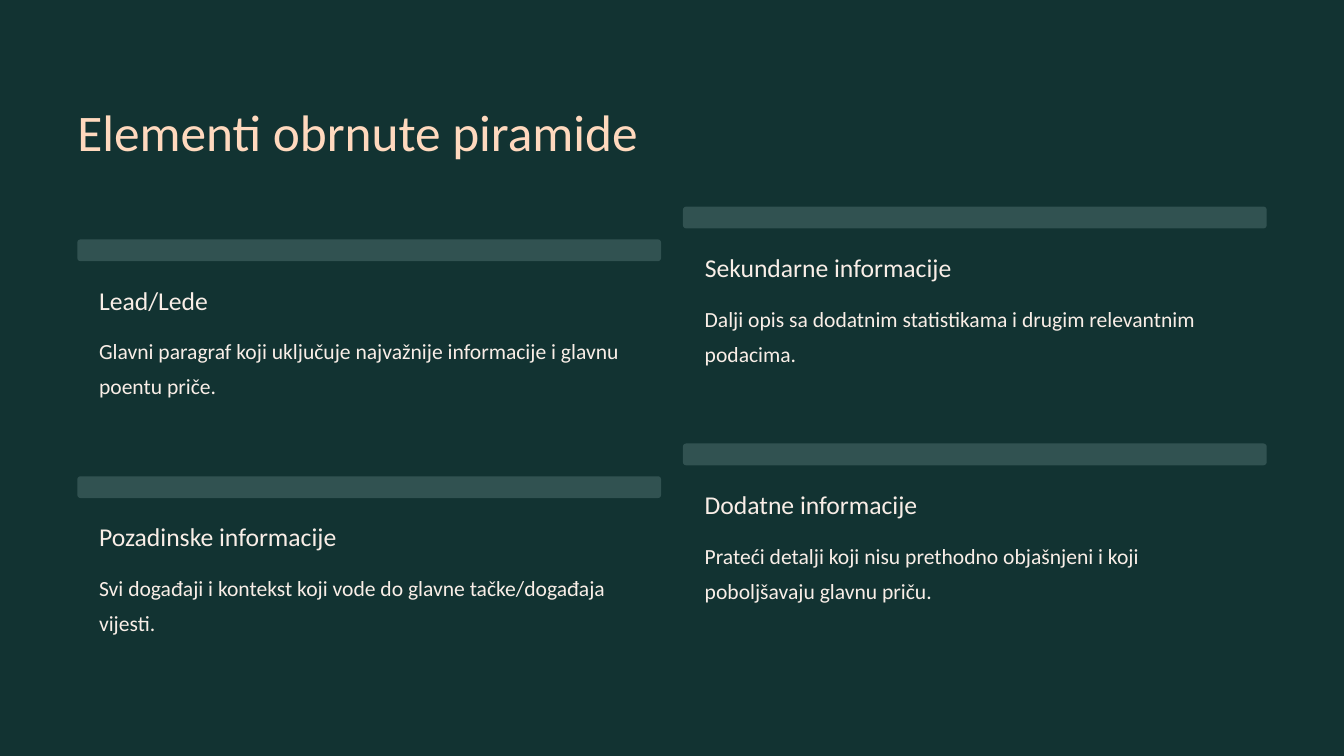
import pptx
import pptx.dml.color
import pptx.enum.shapes
import pptx.enum.text
import pptx.util
from dataclasses import dataclass

Inches = pptx.util.Inches
Pt = pptx.util.Pt

COLORS = {
    "background": "123332",
    "bar": "315251",
    "title": "FFD9BE",
    "body": "F9EEE7",
}
FONT = "Calibri"
COLUMN_LEFTS = (0.92, 8.13)
COLUMN_TOPS = (2.85, 2.46)
ROW_STEP = 2.82
BAR_WIDTH, BAR_HEIGHT = 6.95, 0.26
INDENT = 0.26


@dataclass(frozen=True)
class Element:
    heading: str
    description: str
    column: int
    row: int
    heading_width: float


ELEMENTS = (
    Element("Lead/Lede",
            "Glavni paragraf koji uključuje najvažnije informacije i glavnu poentu priče.",
            0, 0, 3.08),
    Element("Sekundarne informacije",
            "Dalji opis sa dodatnim statistikama i drugim relevantnim podacima.",
            1, 0, 3.22),
    Element("Pozadinske informacije",
            "Svi događaji i kontekst koji vode do glavne tačke/događaja vijesti.",
            0, 1, 3.42),
    Element("Dodatne informacije",
            "Prateći detalji koji nisu prethodno objašnjeni i koji poboljšavaju glavnu priču.",
            1, 1, 3.2),
)


def rgb(name: str) -> pptx.dml.color.RGBColor:
    return pptx.dml.color.RGBColor.from_string(COLORS[name])


def add_text(page, text: str, *, left: float, top: float, width: float, height: float,
             size: float, line: float, color: str = "body", wrap: bool = False) -> None:
    box = page.shapes.add_textbox(Inches(left), Inches(top), Inches(width), Inches(height))
    frame = box.text_frame
    frame.word_wrap = wrap
    frame.auto_size = pptx.enum.text.MSO_AUTO_SIZE.NONE
    frame.margin_left = frame.margin_top = frame.margin_right = frame.margin_bottom = 0
    para = frame.paragraphs[0]
    para.line_spacing = Pt(line)
    span = para.add_run()
    span.text = text
    span.font.name = FONT
    span.font.size = Pt(size)
    span.font.color.rgb = rgb(color)


def add_bar(page, left: float, top: float) -> None:
    bar = page.shapes.add_shape(
        pptx.enum.shapes.MSO_SHAPE.ROUNDED_RECTANGLE,
        Inches(left), Inches(top), Inches(BAR_WIDTH), Inches(BAR_HEIGHT))
    bar.adjustments[0] = 0.15
    bar.shadow.inherit = False
    bar.fill.solid()
    bar.fill.fore_color.rgb = rgb("bar")
    bar.line.fill.background()


def add_element(page, element: Element) -> None:
    left = COLUMN_LEFTS[element.column]
    top = COLUMN_TOPS[element.column] + element.row * ROW_STEP
    add_bar(page, left, top)
    add_text(page, element.heading, left=left + INDENT, top=top + 0.52,
             width=element.heading_width, height=0.38, size=22, line=27.5)
    add_text(page, element.description, left=left + INDENT, top=top + 1.07,
             width=BAR_WIDTH - 2 * INDENT, height=0.84, size=18.5, line=30, wrap=True)


def main() -> None:
    deck = pptx.Presentation()
    deck.slide_width, deck.slide_height = Inches(16), Inches(9)
    page = deck.slides.add_slide(deck.slide_layouts[6])
    page.background.fill.solid()
    page.background.fill.fore_color.rgb = rgb("background")
    add_text(page, "Elementi obrnute piramide", left=COLUMN_LEFTS[0], top=1.16,
             width=9.3, height=0.77, size=44, line=55, color="title")
    for element in ELEMENTS:
        add_element(page, element)
    deck.save("out.pptx")


if __name__ == "__main__":
    main()
